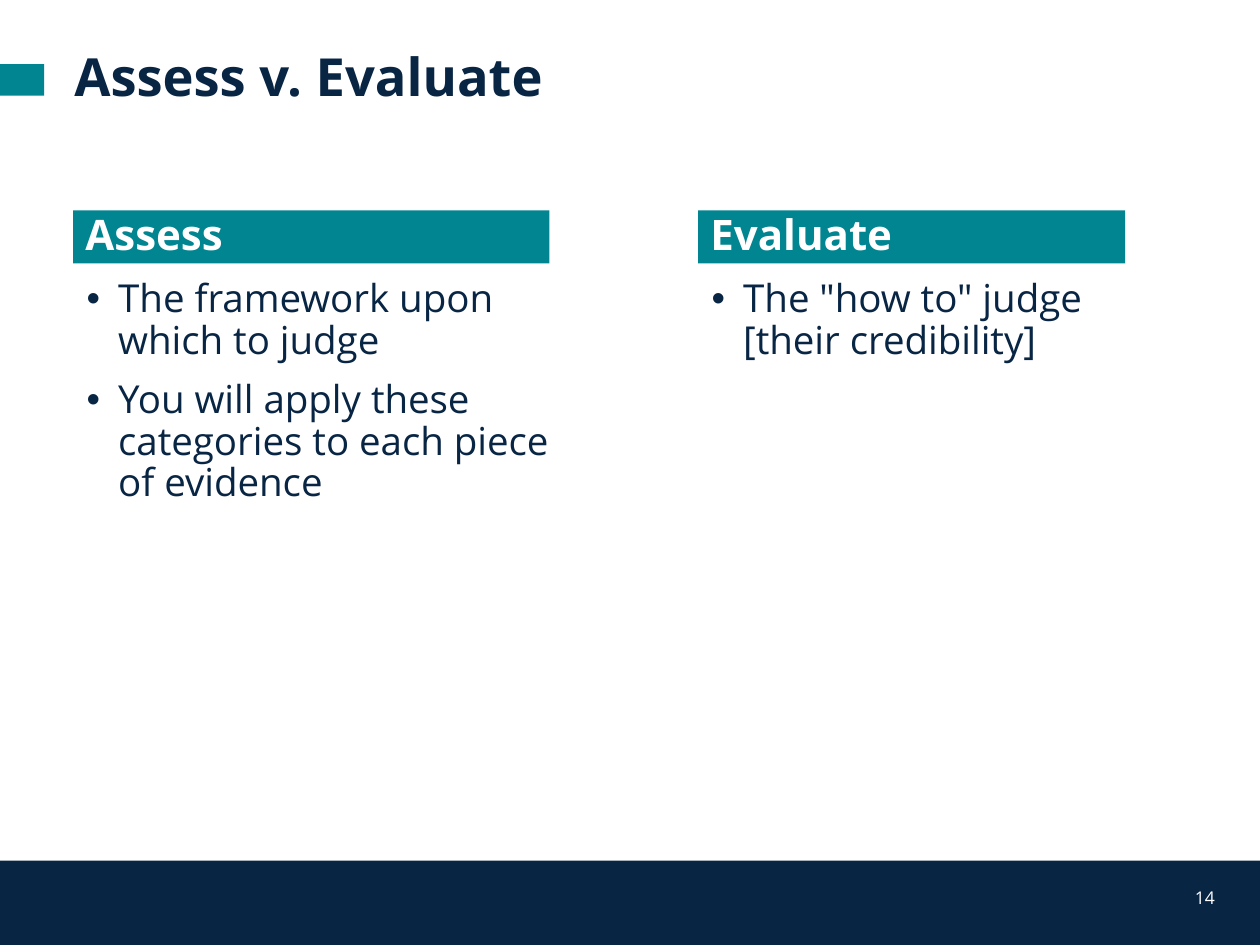
from pptx import Presentation
from pptx.dml.color import RGBColor
from pptx.enum.shapes import MSO_SHAPE
from pptx.enum.text import MSO_ANCHOR, MSO_AUTO_SIZE, PP_ALIGN
from pptx.oxml.ns import qn
from pptx.util import Inches, Pt
from lxml import etree

NAVY = RGBColor(0x08, 0x25, 0x44)
TEAL = RGBColor(0x00, 0x85, 0x91)
WHITE = RGBColor(0xFF, 0xFF, 0xFF)
RECTANGLE = MSO_SHAPE.RECTANGLE
TOP, MIDDLE = MSO_ANCHOR.TOP, MSO_ANCHOR.MIDDLE
LEFT, RIGHT = PP_ALIGN.LEFT, PP_ALIGN.RIGHT
NO_AUTOFIT = MSO_AUTO_SIZE.NONE
TITLE_ONLY = 5

HEADER_TOP, HEADER_HEIGHT = 1.67, 0.42
BODY_TOP, BODY_HEIGHT = 2.17, 3.75
# heading, left, header width, body width, points
COLUMNS = [
    ("Assess", 0.58, 3.78, 3.87,
     ["The framework upon which to judge",
      "You will apply these categories to each piece of evidence"]),
    ("Evaluate", 5.54, 3.39, 3.39,
     ['The "how to" judge [their credibility]']),
]


class SlideBuilder:
    font_name = "Open Sans"
    line_spacing = 0.9
    paragraph_gap = Pt(10)
    bullet_indent = Inches(0.25)

    def __init__(self, slide):
        self.slide = slide

    def fill_text(self, shape, lines, size, color, bold=False, align=LEFT,
                  anchor=TOP, bulleted=False):
        frame = shape.text_frame
        frame.text = "\n".join(lines)
        frame.word_wrap = True
        frame.auto_size = NO_AUTOFIT
        frame.vertical_anchor = anchor
        for index, para in enumerate(frame.paragraphs):
            para.alignment = align
            para.line_spacing = self.line_spacing
            para.space_before = self.paragraph_gap if index else Pt(0)
            if bulleted:
                self.add_bullet(para)
            for span in para.runs:
                span.font.name = self.font_name
                span.font.size = Pt(size)
                span.font.bold = bold
                span.font.color.rgb = color

    def add_bullet(self, para):
        properties = para._p.get_or_add_pPr()
        properties.set("marL", str(self.bullet_indent))
        properties.set("indent", str(-self.bullet_indent))
        etree.SubElement(properties, qn("a:buFont")).set("typeface", "Arial")
        etree.SubElement(properties, qn("a:buChar")).set("char", "•")

    def title(self, text, left, top, width, height):
        title = self.slide.shapes.title
        title.left, title.top = Inches(left), Inches(top)
        title.width, title.height = Inches(width), Inches(height)
        self.fill_text(title, [text], 30, NAVY, bold=True, anchor=MIDDLE)

    def bar(self, left, top, width, height, color):
        bar = self.slide.shapes.add_shape(
            RECTANGLE, Inches(left), Inches(top), Inches(width), Inches(height))
        bar.shadow.inherit = False
        bar.fill.solid()
        bar.fill.fore_color.rgb = color
        bar.line.fill.background()
        return bar

    def header(self, text, left, top, width, height):
        bar = self.bar(left, top, width, height, TEAL)
        self.fill_text(bar, [text], 24, WHITE, bold=True, anchor=MIDDLE)

    def text(self, lines, left, top, width, height, size, color, **style):
        box = self.slide.shapes.add_textbox(
            Inches(left), Inches(top), Inches(width), Inches(height))
        self.fill_text(box, lines, size, color, **style)


def main():
    deck = Presentation()
    deck.slide_width, deck.slide_height = Inches(10), Inches(7.5)
    page = SlideBuilder(deck.slides.add_slide(deck.slide_layouts[TITLE_ONLY]))

    page.bar(0, 6.83, 10, 0.67, NAVY)
    page.text(["14"], 9.26, 7, 0.48, 0.27, 10, WHITE, align=RIGHT, anchor=MIDDLE)
    page.title("Assess v. Evaluate", 0.49, 0.38, 8.63, 0.51)
    page.bar(0, 0.51, 0.35, 0.25, TEAL)

    for heading, left, header_width, body_width, points in COLUMNS:
        page.header(heading, left, HEADER_TOP, header_width, HEADER_HEIGHT)
        page.text(points, left + 0.01, BODY_TOP, body_width, BODY_HEIGHT,
                  22, NAVY, bulleted=True)

    deck.save("out.pptx")


if __name__ == "__main__":
    main()
